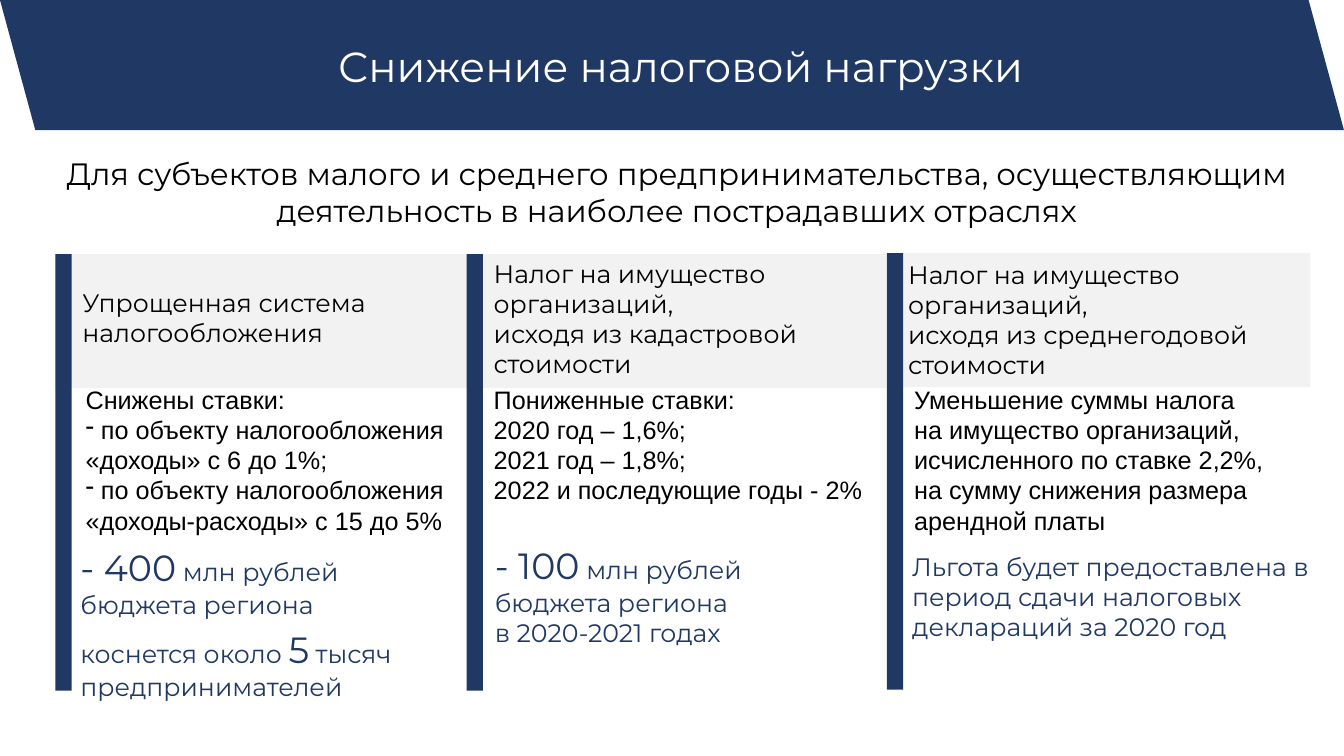
from lxml import etree
from pptx import Presentation
from pptx import util as u
from pptx.dml.color import RGBColor
from pptx.enum import shapes, text
from pptx.oxml.ns import qn

NAVY = RGBColor(0x20, 0x38, 0x64)
PALE = RGBColor(0xF2, 0xF2, 0xF2)
BLACK = RGBColor(0, 0, 0)
WHITE = RGBColor(0xFF, 0xFF, 0xFF)
BIG_FIGURES = ("- 400", "- 100", "5")

COLUMNS = [
    {
        "bar": (4.13, 33.6), "panel": 4.13,
        "heading": ((5.4, 37.33, 29.25, 9.4), ["Упрощенная система налогообложения"]),
        "details": ((5.63, 50.13, 31.35, 21.6), [
            "Снижены ставки:",
            " по объекту налогообложения «доходы» с 6 до 1%;",
            " по объекту налогообложения «доходы-расходы» с 15 до 5%"]),
        "effect": ((5.25, 71.47, 31.88, 22.3), [
            ("- 400", " млн рублей"), "бюджета региона",
            ("коснется около ", "5", " тысяч предпринимателей")]),
    },
    {
        "bar": (34.73, 33.6), "panel": 34.73,
        "heading": ((36, 33.47, 29.25, 17.5), [
            "Налог на имущество организаций,", "исходя из кадастровой стоимости"]),
        "details": ((36, 50.13, 32.85, 17.5), [
            "Пониженные ставки:", "2020 год – 1,6%;", "2021 год – 1,8%;",
            "2022 и последующие годы - 2%"]),
        "effect": ((36.08, 71.2, 31.88, 15.2), [
            ("- 100", " млн рублей"), "бюджета региона", "в 2020-2021 годах"]),
    },
    {
        "bar": (66, 33.47), "panel": 66.3,
        "heading": ((66.83, 33.6, 31.4, 17.5), [
            "Налог на имущество организаций,", "исходя из среднегодовой стоимости"]),
        "details": ((67.28, 50.13, 28.28, 21.6), [
            "Уменьшение суммы налога",
            "на имущество организаций, исчисленного по ставке 2,2%, "
            "на сумму снижения размера арендной платы"]),
        "effect": ((67.13, 72.27, 32.93, 13.5), [
            "Льгота будет предоставлена в период сдачи налоговых деклараций за 2020 год"]),
    },
]


class TaxSlide:
    """Draws styled elements on one slide, with lengths in percent of its size."""

    def __init__(self, presentation):
        self.width = presentation.slide_width
        self.height = presentation.slide_height
        self.slide = presentation.slides.add_slide(presentation.slide_layouts[6])

    def box(self, left, top, width, height):
        return (int(self.width * left / 100), int(self.height * top / 100),
                int(self.width * width / 100), int(self.height * height / 100))

    def paint(self, shape, color):
        shape.shadow.inherit = False
        shape.fill.solid()
        shape.fill.fore_color.rgb = color
        shape.line.fill.background()

    def block(self, area, color):
        kind = shapes.MSO_SHAPE.RECTANGLE
        self.paint(self.slide.shapes.add_shape(kind, *self.box(*area)), color)

    def banner(self, slant, height, color):
        corners = [(0, 0), (100 - slant, 0), (100, height), (slant, height)]
        points = [self.box(x, y, 0, 0)[:2] for x, y in corners]
        builder = self.slide.shapes.build_freeform(*points[0])
        builder.add_line_segments(points[1:], close=True)
        self.paint(builder.convert_to_shape(), color)

    def label(self, area, lines, size=18, color=BLACK, font="Montserrat", align=None):
        frame = self.slide.shapes.add_textbox(*self.box(*area)).text_frame
        frame.word_wrap = True
        frame.auto_size = text.MSO_AUTO_SIZE.SHAPE_TO_FIT_TEXT
        for index, line in enumerate(lines):
            paragraph = frame.paragraphs[0] if index == 0 else frame.add_paragraph()
            paragraph.alignment = align
            for part in (line,) if isinstance(line, str) else line:
                run = paragraph.add_run()
                run.text = part
                run.font.size = u.Pt(26 if part in BIG_FIGURES else size)
                run.font.name = font
                run.font.color.rgb = color
        return frame

    def dash(self, paragraph):
        properties = paragraph._p.get_or_add_pPr()
        properties.set("marL", "0")
        properties.set("indent", "0")
        etree.SubElement(properties, qn("a:buChar")).set("char", "-")

    def column(self, bar, panel, heading, details, effect):
        left, top = bar
        self.block((panel, top, 31.2, 17.75), PALE)
        self.block((left, top, 1.2, 57.75), NAVY)
        self.label(*heading)
        rates = self.label(*details, font="Arial")
        for paragraph in rates.paragraphs:
            if paragraph.text.startswith(" "):
                self.dash(paragraph)
        result = self.label(*effect, color=NAVY)
        for paragraph in result.paragraphs[1:]:
            if len(paragraph.runs) > 1:
                paragraph.space_before = u.Pt(6)


def main():
    presentation = Presentation()
    presentation.slide_width = u.Inches(13.33)
    presentation.slide_height = u.Inches(7.5)
    slide = TaxSlide(presentation)
    center = text.PP_ALIGN.CENTER
    slide.banner(2.63, 17.2, NAVY)
    slide.label((3.9, 4.67, 93.5, 8.1), ["Снижение налоговой нагрузки"],
                size=30, color=WHITE, align=center)
    slide.label((3.6, 19.87, 93.5, 11.2),
                ["Для субъектов малого и среднего предпринимательства, "
                 "осуществляющим деятельность в наиболее пострадавших отраслях"],
                size=22, align=center)
    for column in COLUMNS:
        slide.column(**column)
    presentation.save("out.pptx")


if __name__ == "__main__":
    main()
